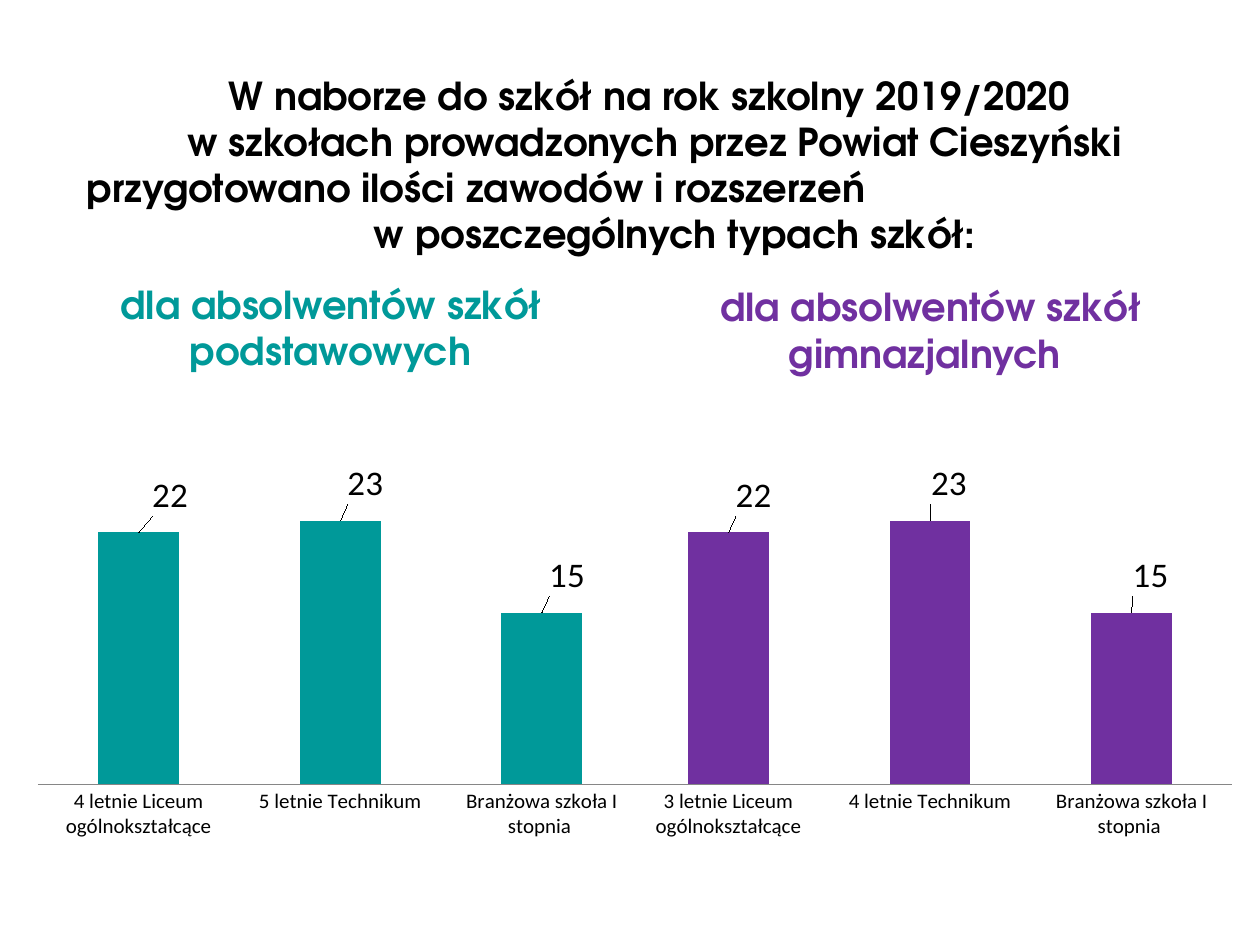
import pptx
import pptx.util
import pptx.dml.color
import pptx.chart.data
import pptx.enum.chart
import pptx.enum.text
import pptx.oxml
import pptx.oxml.ns

Cm, Pt = pptx.util.Cm, pptx.util.Pt
Kind = pptx.enum.chart
Align = pptx.enum.text.PP_ALIGN

# Content: title lines are (text, alignment, left margin in cm)
TITLE = [
    ("W naborze do szkół na rok szkolny 2019/2020 ", Align.CENTER, 0),
    ("w szkołach prowadzonych przez Powiat Cieszyński", Align.CENTER, 0),
    ("przygotowano ilości zawodów i rozszerzeń", Align.LEFT, 0),
    ("w poszczególnych typach szkół:", Align.CENTER, 0.8),
]
GROUPS = [
    dict(head="dla absolwentów szkół podstawowych", box=(1.07, 5.54, 11.2, 2.11),
         color="009999", left=0.51, shift=(0.05, 0.04, 0.04),
         cats=["4 letnie Liceum ogólnokształcące", "5 letnie Technikum",
               "Branżowa szkoła I stopnia "]),
    dict(head="dla absolwentów szkół gimnazjalnych ", box=(12.95, 5.59, 11.61, 2.11),
         color="7030A0", left=12.4, shift=(0.04, 0.03, 0.03),
         cats=["3 letnie Liceum ogólnokształcące", "4 letnie Technikum",
               "Branżowa szkoła I stopnia "]),
]
VALS = (22, 23, 15)
RISE = -0.03


def rgb(code):
    return pptx.dml.color.RGBColor.from_string(code)


def style(font, size, color="000000", name="Calibri", bold=False):
    font.size, font.name, font.bold = Pt(size), name, bold
    font.color.rgb = rgb(color)


def text(slide, lines, box, color="000000", size=22, name="TeX Gyre Adventor", bold=True):
    frame = slide.shapes.add_textbox(*map(Cm, box)).text_frame
    frame.word_wrap = True
    for i, (words, align, indent) in enumerate(lines):
        para = frame.add_paragraph() if i else frame.paragraphs[0]
        para.alignment = align
        if indent:
            para._p.get_or_add_pPr().set("marL", str(Cm(indent)))
        run = para.add_run()
        run.text = words
        style(run.font, size, color, name, bold)


def layout(**parts):
    tags = "".join(f'<c:{key} val="{val}"/>' for key, val in parts.items())
    return pptx.oxml.parse_xml(
        f'<c:layout {pptx.oxml.ns.nsdecls("c")}><c:manualLayout>{tags}'
        '</c:manualLayout></c:layout>')


def bars(slide, group):
    data = pptx.chart.data.CategoryChartData()
    data.categories = group["cats"]
    data.add_series("Series 1", VALS)
    chart = slide.shapes.add_chart(
        Kind.XL_CHART_TYPE.COLUMN_CLUSTERED, Cm(group["left"]), Cm(9.32),
        Cm(12.7), Cm(7.62), data).chart
    chart.has_legend = chart.has_title = False
    style(chart.font, 10)

    # Axes
    axis = chart.category_axis
    axis.major_tick_mark = Kind.XL_TICK_MARK.NONE
    axis.format.line.color.rgb = rgb("868686")
    style(axis.tick_labels.font, 12)
    scale = chart.value_axis
    scale.minimum_scale, scale.maximum_scale = 0, 25
    scale.has_major_gridlines = scale.visible = False

    # Columns
    plot = chart.plots[0]
    plot.gap_width, plot.vary_by_categories = 150, False
    row = plot.series[0]
    row.format.fill.solid()
    row.format.fill.fore_color.rgb = rgb(group["color"])

    # Value labels, moved up and right of their columns
    row.data_labels.show_value = True
    style(row.data_labels.font, 20)
    for i in range(len(VALS)):
        label = row.points[i].data_label
        label.position = Kind.XL_LABEL_POSITION.OUTSIDE_END
        style(label.font, 20)
    marks = row._element.iter(pptx.oxml.ns.qn("c:dLbl"))
    for mark, move in zip(marks, group["shift"]):
        mark.insert(1, layout(x=move, y=RISE))

    # Plot area
    area = chart._chartSpace.chart.plotArea
    for old in area.findall(pptx.oxml.ns.qn("c:layout")):
        area.remove(old)
    area.insert(0, layout(layoutTarget="inner", xMode="edge", yMode="edge",
                          x=0.02, y=0.08, w=0.96, h=0.77))


def main():
    deck = pptx.Presentation()
    deck.slide_width, deck.slide_height = Cm(25.4), Cm(19.05)
    slide = deck.slides.add_slide(deck.slide_layouts[6])
    text(slide, TITLE, (1.5, 1.32, 23.39, 3.99))
    for group in GROUPS:
        text(slide, [(group["head"], Align.CENTER, 0)], group["box"], color=group["color"])
    for group in GROUPS:
        bars(slide, group)
    deck.save("out.pptx")


if __name__ == "__main__":
    main()
